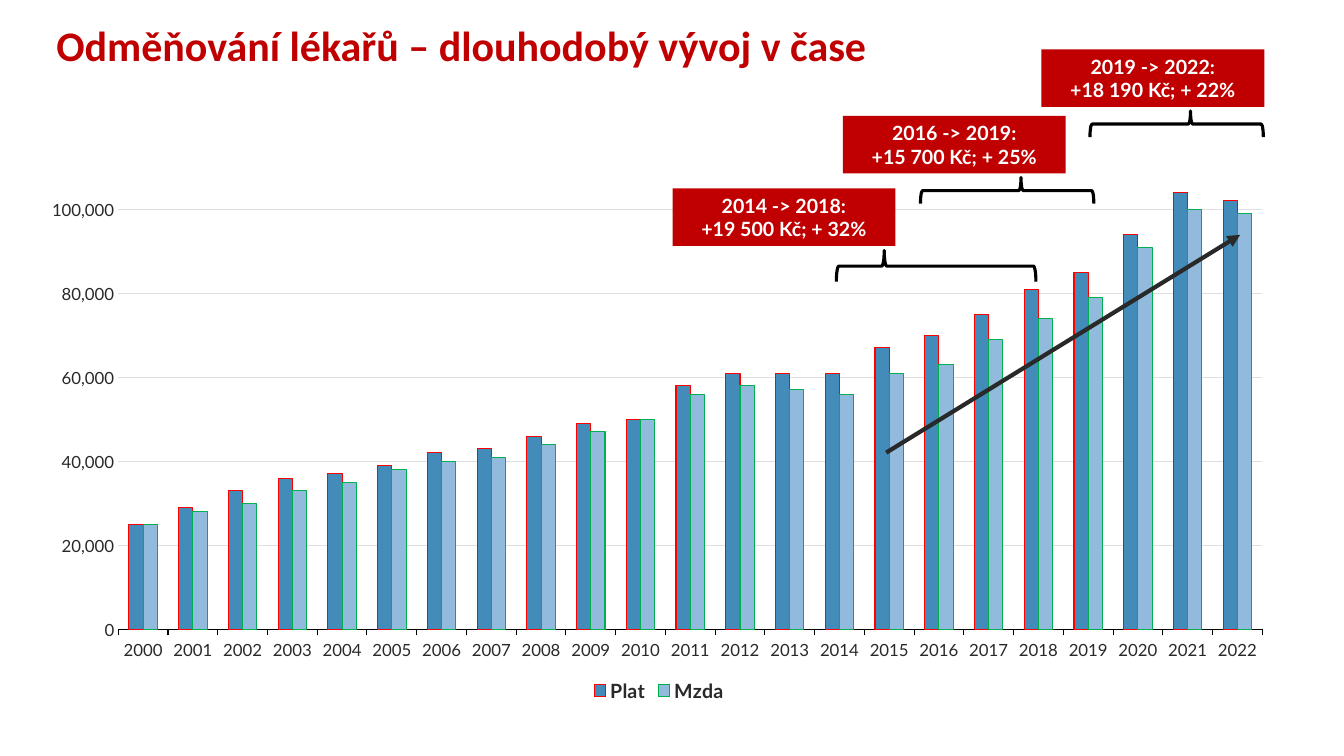
import pptx
import pptx.chart.data
import pptx.dml.color
import pptx.enum.chart
import pptx.enum.shapes
import pptx.enum.text
import pptx.oxml
import pptx.util

theme = {
    "red": "C00000", "ink": "292929", "white": "FFFFFF", "black": "000000",
    "grid": "DFDFDF", "head": "Calibri", "body": "Lato",
    "title": 30, "label": 14, "axis": 12, "base": 10,
}
NS = ' xmlns:a="http://schemas.openxmlformats.org/drawingml/2006/main"'
NS += ' xmlns:c="http://schemas.openxmlformats.org/drawingml/2006/chart"'

deck = pptx.Presentation()
deck.slide_width = pptx.util.Inches(13.33)
deck.slide_height = pptx.util.Inches(7.5)
slide = deck.slides.add_slide(deck.slide_layouts[6])
shapes = slide.shapes
kinds = pptx.enum.shapes.MSO_SHAPE
rgb = pptx.dml.color.RGBColor.from_string


def place(x, y, *size):
    wide, high = deck.slide_width / 100, deck.slide_height / 100
    return [round(n * u) for n, u in zip((x, y, *size), (wide, high) * 2)]


def style(font, size, color, bold=False, face="body"):
    font.name = theme[face]
    font.size = pptx.util.Pt(theme[size])
    font.bold = bold
    font.color.rgb = rgb(theme[color])


title = shapes.add_textbox(*place(3.45, 3.33, 66.9, 6.13)).text_frame
title.word_wrap = True
title.vertical_anchor = pptx.enum.text.MSO_ANCHOR.MIDDLE
title.text = "Odměňování lékařů – dlouhodobý vývoj v čase"
title.paragraphs[0].line_spacing = 0.9
style(title.paragraphs[0].runs[0].font, "title", "red", True, "head")

wages = [
    ("Plat", "438CB9", "FF0000",
     [25, 29, 33, 36, 37, 39, 42, 43, 46, 49, 50, 58,
      61, 61, 61, 67, 70, 75, 81, 85, 94, 104, 102]),
    ("Mzda", "92BADC", "00B050",
     [25, 28, 30, 33, 35, 38, 40, 41, 44, 47, 50, 56,
      58, 57, 56, 61, 63, 69, 74, 79, 91, 100, 99]),
]
data = pptx.chart.data.CategoryChartData(number_format="#,##0")
data.categories = [str(year) for year in range(2000, 2023)]
for name, fill, edge, sums in wages:
    data.add_series(name, [n * 1000 for n in sums])
chart = shapes.add_chart(
    pptx.enum.chart.XL_CHART_TYPE.COLUMN_CLUSTERED,
    *place(2.25, 20.67, 93.55, 72.8), data).chart
style(chart.font, "base", "ink")
chart.has_title = False
chart.has_legend = True
chart.legend.position = pptx.enum.chart.XL_LEGEND_POSITION.BOTTOM
chart.legend.include_in_layout = False
style(chart.legend.font, "label", "ink", True)

plot = chart.plots[0]
plot.gap_width = 150
plot.overlap = 0
plot.vary_by_categories = False
for bars, (name, fill, edge, sums) in zip(plot.series, wages):
    bars.format.fill.solid()
    bars.format.fill.fore_color.rgb = rgb(fill)
    bars.format.line.color.rgb = rgb(edge)
    bars.format.line.width = pptx.util.Pt(0.75)

years, money = chart.category_axis, chart.value_axis
marks = pptx.enum.chart.XL_TICK_MARK
for axis, mark in ((years, marks.OUTSIDE), (money, marks.NONE)):
    axis.major_tick_mark = mark
    axis.minor_tick_mark = marks.NONE
    style(axis.tick_labels.font, "axis", "ink")
years.tick_label_position = pptx.enum.chart.XL_TICK_LABEL_POSITION.LOW
years.format.line.color.rgb = rgb(theme["black"])
years.format.line.width = pptx.util.Pt(0.75)
money.minimum_scale, money.maximum_scale = 0, 110000
money.major_unit = 20000
money.tick_labels.number_format = "#,##0"
money.tick_labels.number_format_is_linked = False
money.format.line.fill.background()
money.major_gridlines.format.line.color.rgb = rgb(theme["grid"])
money.major_gridlines.format.line.width = pptx.util.Pt(0.75)

area = chart.element.find(".//{*}plotArea")
for old in area.findall("{*}layout"):
    area.remove(old)
area.insert(0, pptx.oxml.parse_xml(
    f'<c:layout{NS}><c:manualLayout><c:layoutTarget val="inner"/>'
    '<c:xMode val="edge"/><c:yMode val="edge"/>'
    '<c:x val="0.07"/><c:y val="0.02"/><c:w val="0.91"/><c:h val="0.84"/>'
    '</c:manualLayout></c:layout>'))

gains = [
    ("2014 -> 2018:\n+19 500 Kč; + 32%", (50.04, 24.93),
     (62.23, 33.13, 14.85, 4.13), 0.24),
    ("2016 -> 2019:\n+15 700 Kč; + 25%", (62.72, 15.33),
     (68.49, 23.47, 12.9, 3.47), 0.58),
    ("2019 -> 2022:\n+18 190 Kč; + 22%", (77.49, 6.53),
     (81.1, 14.67, 12.9, 3.47), 0.58),
]
for text, spot, span, peak in gains:
    box = shapes.add_shape(kinds.RECTANGLE, *place(*spot, 16.58, 7.6))
    box.shadow.inherit = False
    box.fill.solid()
    box.fill.fore_color.rgb = rgb(theme["red"])
    box.line.fill.background()
    box.text_frame.word_wrap = True
    box.text_frame.text = text
    for line in box.text_frame.paragraphs:
        line.alignment = pptx.enum.text.PP_ALIGN.CENTER
        style(line.runs[0].font, "label", "white", True)

    x, y, wide, high = place(*span)
    shift = (wide - high) // 2
    brace = shapes.add_shape(
        kinds.RIGHT_BRACE, x + shift, y - shift, high, wide)
    brace.rotation = 270
    brace.adjustments[0] = 0.08
    brace.adjustments[1] = peak
    brace.shadow.inherit = False
    brace.fill.background()
    brace.line.color.rgb = rgb(theme["black"])
    brace.line.width = pptx.util.Pt(2.25)

trend = shapes.add_connector(
    pptx.enum.shapes.MSO_CONNECTOR.STRAIGHT,
    *place(65.94, 59.87, 92.27, 31.07))
trend.line.color.rgb = rgb(theme["ink"])
trend.line.width = pptx.util.Pt(3)
trend.line._get_or_add_ln().append(
    pptx.oxml.parse_xml(f'<a:tailEnd{NS} type="triangle"/>'))
trend.element.spPr.append(pptx.oxml.parse_xml(f"<a:effectLst{NS}/>"))

deck.save("out.pptx")
